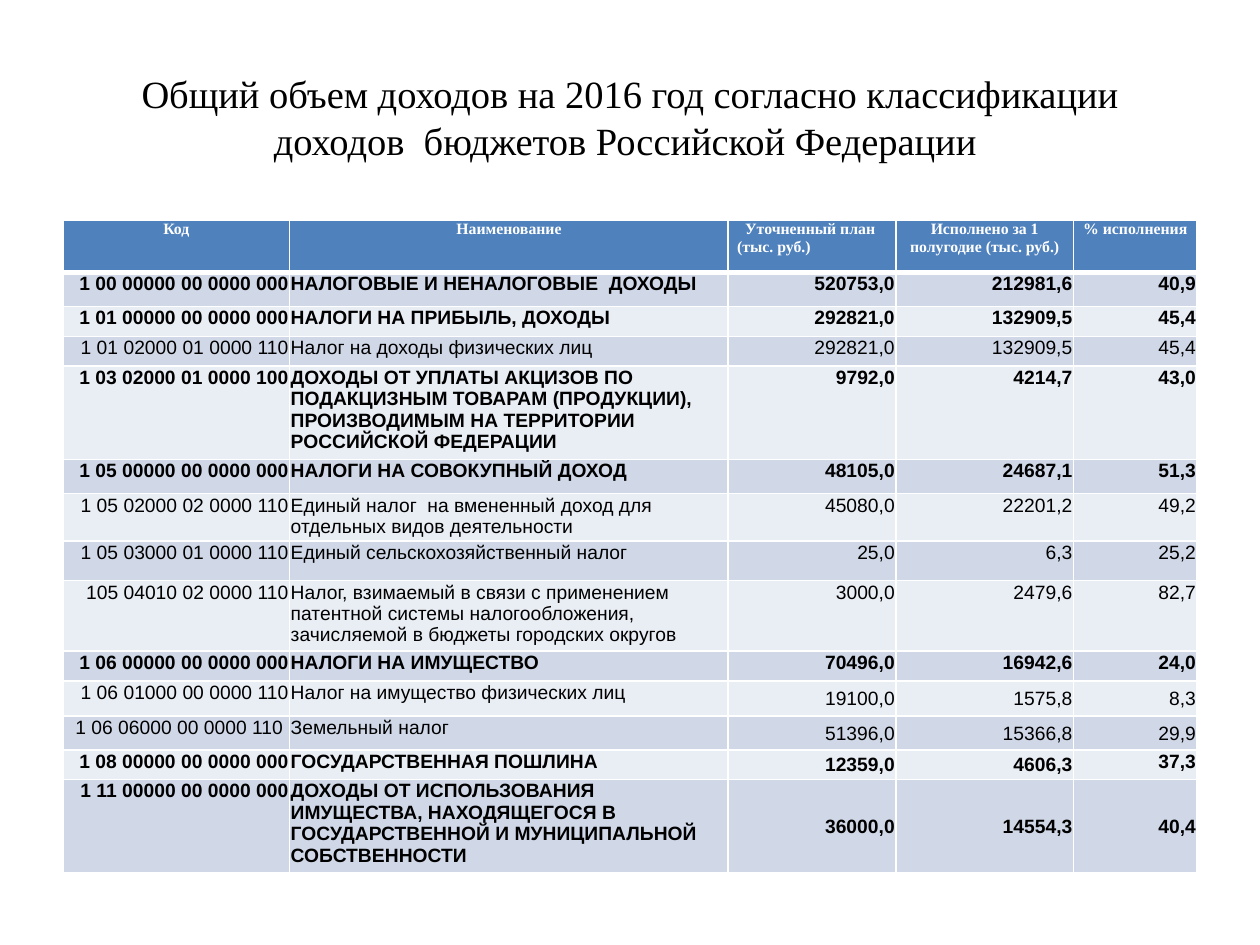
from pptx import Presentation
from pptx.dml.color import RGBColor as Rgb
from pptx.enum.text import MSO_ANCHOR as Anchor, PP_ALIGN as Align
from pptx.oxml import parse_xml
from pptx.oxml.ns import nsdecls
from pptx.util import Cm, Pt

SERIF, SANS = "Times New Roman", "Arial"
WHITE, BLACK, BLUE = "FFFFFF", "000000", "4F81BD"
BANDS = ("D0D8E8", "E9EDF4")
TITLE = ("Общий объем доходов на 2016 год согласно классификации "
         "доходов  бюджетов Российской Федерации ")
WIDTHS = (4.57, 8.84, 3.38, 3.58, 2.49)
HEAD_H = 1.04
HEADS = (
    (("Код", Align.CENTER),),
    (("Наименование", Align.CENTER),),
    (("Уточненный план ", Align.CENTER), ("(тыс. руб.)", Align.LEFT)),
    (("Исполнено за 1 полугодие (тыс. руб.)", Align.CENTER),),
    (("% исполнения ", Align.CENTER),),
)
ALIGNS = (Align.RIGHT, Align.LEFT) + (Align.RIGHT,) * 3
# fmt: off
ROWS = (
    (0.69, True, (), ("1 00 00000 00 0000 000", "НАЛОГОВЫЕ И НЕНАЛОГОВЫЕ  ДОХОДЫ", "520753,0", "212981,6", "40,9")),
    (0.6, True, (), ("1 01 00000 00 0000 000", "НАЛОГИ НА ПРИБЫЛЬ, ДОХОДЫ", "292821,0", "132909,5", "45,4")),
    (0.6, False, (), ("1 01 02000 01 0000 110", "Налог на доходы физических лиц", "292821,0", "132909,5", "45,4")),
    (1.75, True, (), ("1 03 02000 01 0000 100", "ДОХОДЫ ОТ УПЛАТЫ АКЦИЗОВ ПО ПОДАКЦИЗНЫМ ТОВАРАМ (ПРОДУКЦИИ), "
                      "ПРОИЗВОДИМЫМ НА ТЕРРИТОРИИ РОССИЙСКОЙ ФЕДЕРАЦИИ", "9792,0", "4214,7", "43,0")),
    (0.69, True, (), ("1 05 00000 00 0000 000", "НАЛОГИ НА СОВОКУПНЫЙ ДОХОД", "48105,0", "24687,1", "51,3")),
    (0.89, False, (), ("1 05 02000 02 0000 110", "Единый налог  на вмененный доход для отдельных видов деятельности",
                       "45080,0", "22201,2", "49,2")),
    (0.8, False, (), ("1 05 03000 01 0000 110", "Единый сельскохозяйственный налог", "25,0", "6,3", "25,2")),
    (1.32, False, (), ("105 04010 02 0000 110", "Налог, взимаемый в связи с применением патентной системы "
                       "налогообложения, зачисляемой в бюджеты городских округов", "3000,0", "2479,6", "82,7")),
    (0.6, True, (), ("1 06 00000 00 0000 000", "НАЛОГИ НА ИМУЩЕСТВО", "70496,0", "16942,6", "24,0")),
    (0.71, False, (2, 3, 4), ("1 06 01000 00 0000 110", "Налог на имущество физических лиц", "19100,0", "1575,8", "8,3")),
    (0.68, False, (2, 3, 4), ("1 06 06000 00 0000 110 ", "Земельный налог", "51396,0", "15366,8", "29,9")),
    (0.6, True, (2, 3), ("1 08 00000 00 0000 000", "ГОСУДАРСТВЕННАЯ ПОШЛИНА", "12359,0", "4606,3", "37,3")),
    (1.73, True, (2, 3, 4), ("1 11 00000 00 0000 000", "ДОХОДЫ ОТ ИСПОЛЬЗОВАНИЯ ИМУЩЕСТВА, НАХОДЯЩЕГОСЯ В "
                             "ГОСУДАРСТВЕННОЙ И МУНИЦИПАЛЬНОЙ СОБСТВЕННОСТИ", "36000,0", "14554,3", "40,4")),
)
# fmt: on


def color(code):
    return Rgb.from_string(code)


def write(frame, lines, size, face, tint, bold=False):
    for i, (text, align) in enumerate(lines):
        para = frame.paragraphs[0] if i == 0 else frame.add_paragraph()
        para.alignment = align
        run = para.add_run()
        run.text = text
        font = run.font
        font.size, font.name, font.bold = Pt(size), face, bold
        font.color.rgb = color(tint)


def edge(cell, top, bottom):
    props = cell._tc.get_or_add_tcPr()
    sides = (("L", 1), ("R", 1), ("T", top), ("B", bottom))
    for i, (side, width) in enumerate(sides):
        props.insert(i, parse_xml(
            f'<a:ln{side} {nsdecls("a")} w="{Pt(width)}"><a:solidFill>'
            f'<a:srgbClr val="{WHITE}"/></a:solidFill></a:ln{side}>'))


def dress(cell, fill, pads, top=1, bottom=1, mid=False):
    cell.fill.solid()
    cell.fill.fore_color.rgb = color(fill)
    side, above = pads
    cell.margin_left = cell.margin_right = Cm(side)
    cell.margin_top, cell.margin_bottom = Cm(above), 0
    cell.vertical_anchor = Anchor.MIDDLE if mid else Anchor.TOP
    edge(cell, top, bottom)


def add_title(slide, left, top, width, height):
    frame = slide.shapes.add_textbox(Cm(left), Cm(top), Cm(width), Cm(height)).text_frame
    frame.word_wrap = True
    frame.vertical_anchor = Anchor.MIDDLE
    write(frame, [(TITLE, Align.CENTER)], 22, SERIF, BLACK)


def add_grid(slide, left, top, width):
    high = HEAD_H + sum(row[0] for row in ROWS)
    grid = slide.shapes.add_table(len(ROWS) + 1, len(WIDTHS), Cm(left), Cm(top),
                                  Cm(width), Cm(high)).table
    for col, part in zip(grid.columns, WIDTHS):
        col.width = Cm(width * part / sum(WIDTHS))
    grid.rows[0].height = Cm(HEAD_H)
    for c, lines in enumerate(HEADS):
        cell = grid.cell(0, c)
        dress(cell, BLUE, (0.18, 0), bottom=3)
        write(cell.text_frame, lines, 9, SERIF, WHITE, True)
    for r, (tall, bold, mids, texts) in enumerate(ROWS, 1):
        grid.rows[r].height = Cm(tall)
        for c, (text, align) in enumerate(zip(texts, ALIGNS)):
            cell = grid.cell(r, c)
            dress(cell, BANDS[(r - 1) % 2], (0.02, 0.02), top=3 if r == 1 else 1, mid=c in mids)
            write(cell.text_frame, [(text, align)], 11, SANS, BLACK, bold)


def main():
    deck = Presentation()
    deck.slide_width, deck.slide_height = Cm(25.4), Cm(19.05)
    slide = deck.slides.add_slide(deck.slide_layouts[6])
    add_title(slide, 1.27, 0.76, 22.86, 3.18)
    add_grid(slide, 1.27, 4.45, 22.86)
    deck.save("out.pptx")


if __name__ == "__main__":
    main()
